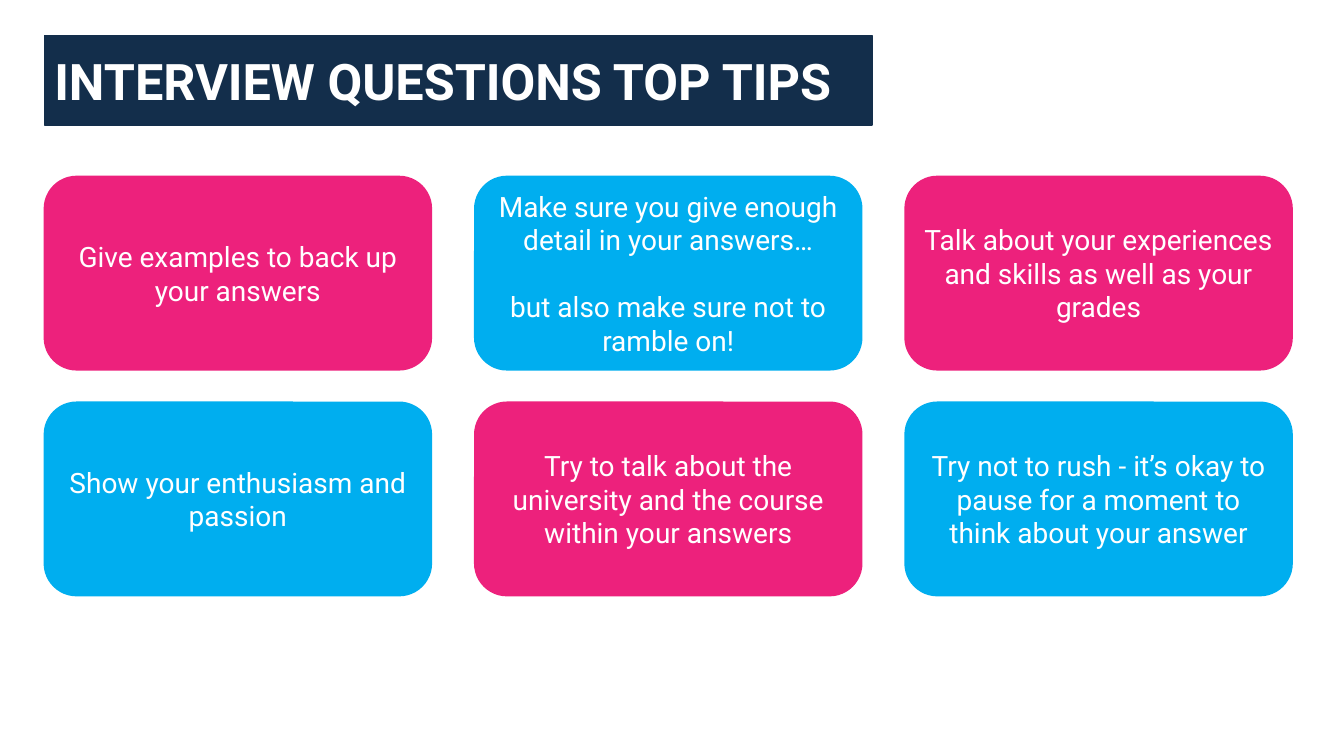
from pptx import Presentation
from pptx.dml.color import RGBColor
from pptx.enum.shapes import MSO_SHAPE
from pptx.enum.text import MSO_ANCHOR, PP_ALIGN
from pptx.util import Pt

RECT = MSO_SHAPE.RECTANGLE
ROUND = MSO_SHAPE.ROUNDED_RECTANGLE
MIDDLE = MSO_ANCHOR.MIDDLE
LEFT = PP_ALIGN.LEFT
CENTER = PP_ALIGN.CENTER

NAVY = RGBColor(0x13, 0x2E, 0x4B)
PINK = RGBColor(0xED, 0x21, 0x7C)
BLUE = RGBColor(0x00, 0xAE, 0xEF)
WHITE = RGBColor(0xFF, 0xFF, 0xFF)

EDGE = 31.7
TOP = 126
STEP_X, STEP_Y = 307.4, 161.3
CARD = (276.5, 138.2)
TIPS = [
    [
        ["Give examples to back up your answers"],
        ["Make sure you give enough detail in your answers…",
         "but also make sure not to ramble on!"],
        ["Talk about your experiences and skills as well as your grades"],
    ],
    [
        ["Show your enthusiasm and passion"],
        ["Try to talk about the university and the course within your answers"],
        ["Try not to rush - it’s okay to pause for a moment to think about your answer"],
    ],
]


class Deck:
    """Hold the text style and the slide being built."""

    def __init__(self):
        self.file = Presentation()
        self.file.slide_width, self.file.slide_height = Pt(960), Pt(540)
        self.slide = self.file.slides.add_slide(self.file.slide_layouts[6])
        self.font = {"name": "Roboto"}
        self.gap = Pt(24)

    def box(self, kind, area, color, lines, align, style):
        shape = self.slide.shapes.add_shape(kind, *map(Pt, area))
        shape.shadow.inherit = False
        shape.fill.solid()
        shape.fill.fore_color.rgb = color
        shape.line.color.rgb = color
        shape.line.width = Pt(1)
        frame = shape.text_frame
        frame.word_wrap = True
        frame.vertical_anchor = MIDDLE
        for i, line in enumerate(lines):
            para = frame.add_paragraph() if i else frame.paragraphs[0]
            para.alignment = align
            if i:
                para.space_before = self.gap
            run = para.add_run()
            run.text = line
            run.font.color.rgb = WHITE
            for key, value in {**self.font, **style}.items():
                setattr(run.font, key, value)

    def title(self, text):
        style = {"size": Pt(36), "bold": True}
        self.box(RECT, (EDGE, 25.2, 591.1, 64.1), NAVY, [text], LEFT, style)

    def card(self, row, col, lines):
        area = (EDGE + col * STEP_X, TOP + row * STEP_Y, *CARD)
        color = BLUE if (row + col) % 2 else PINK
        self.box(ROUND, area, color, lines, CENTER, {"size": Pt(20)})


def main():
    deck = Deck()
    deck.title("INTERVIEW QUESTIONS TOP TIPS")
    for row, tips in enumerate(TIPS):
        for col, lines in enumerate(tips):
            deck.card(row, col, lines)
    deck.file.save("out.pptx")


if __name__ == "__main__":
    main()
